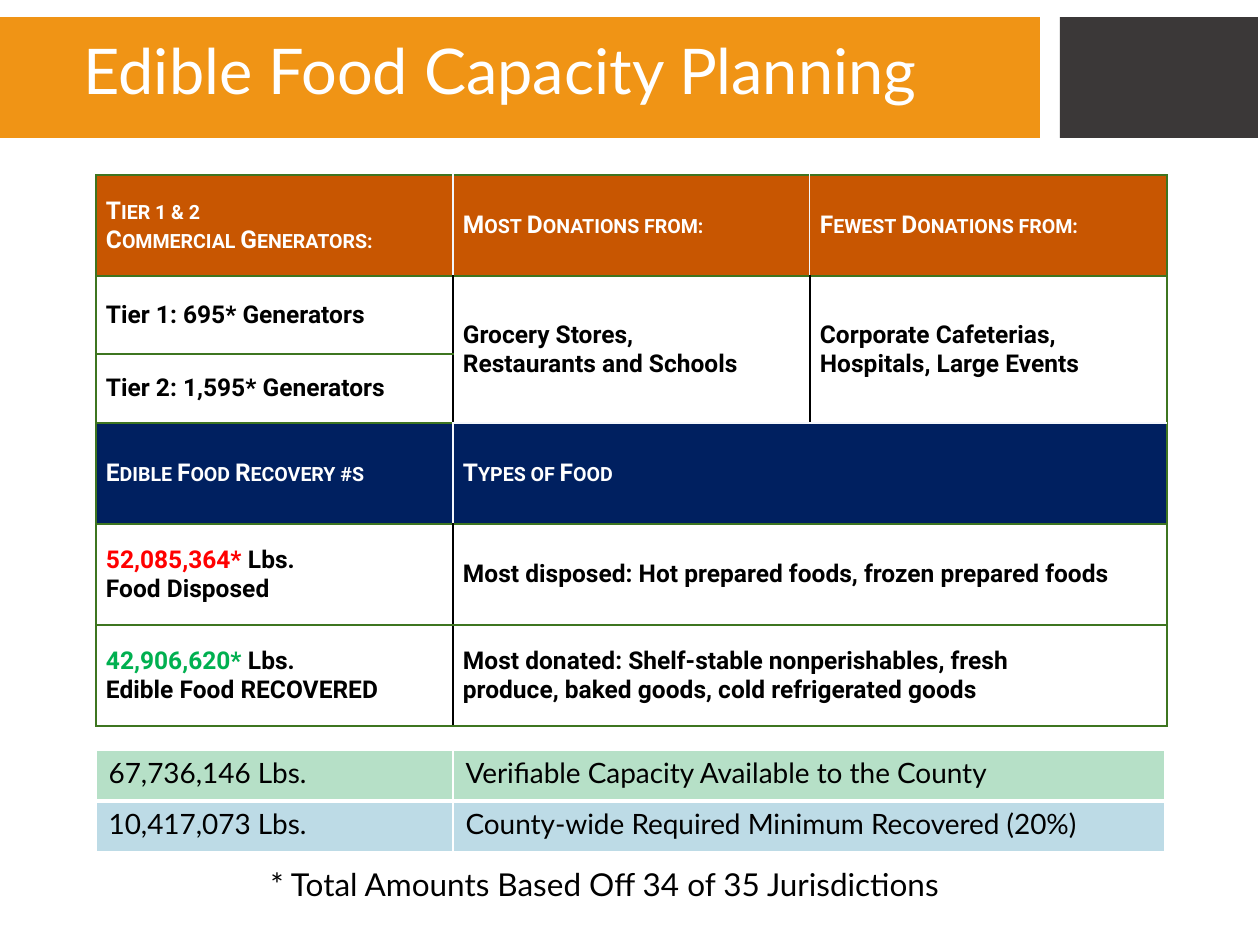
"""Build the slide on edible food capacity planning."""
from lxml import etree
from pptx import Presentation
from pptx.dml.color import RGBColor
from pptx.enum.shapes import MSO_SHAPE
from pptx.enum.text import MSO_ANCHOR, MSO_AUTO_SIZE, PP_ALIGN
from pptx.oxml.ns import qn
from pptx.util import Emu, Pt

RECT = MSO_SHAPE.RECTANGLE
MIDDLE, TOP = MSO_ANCHOR.MIDDLE, MSO_ANCHOR.TOP
LEFT = PP_ALIGN.LEFT
FIXED = MSO_AUTO_SIZE.NONE

HEX = {
    "white": "FFFFFF", "black": "000000", "gold": "F09415", "coal": "3B3838",
    "rust": "C85601", "navy": "002060", "mint": "B6E0C7", "sky": "BDDBE6",
    "red": "FF0000", "green": "00B050", "moss": "3E7520", "pale": "F4F7FC",
}
SCALE = 914400 / 126

TITLE = "Edible Food Capacity Planning"
NOTE = "* Total Amounts Based Off 34 of 35 Jurisdictions"
BARS = [("gold", (-2, 17, 1042, 121)), ("coal", (1060, 17, 198, 121))]

FACTS = [
    ["Tier 1 & 2\nCommercial Generators:", "Most Donations from:", "Fewest Donations from:"],
    ["Tier 1: 695* Generators", "Grocery Stores,\vRestaurants and Schools",
     "Corporate Cafeterias,\nHospitals, Large Events"],
    ["Tier 2: 1,595* Generators", "", ""],
    ["Edible Food Recovery #s", "Types of Food", ""],
    [[("52,085,364*", "red"), (" Lbs.\nFood Disposed", "black")],
     "Most disposed: Hot prepared foods, frozen prepared foods", ""],
    [[("42,906,620*", "green"), (" Lbs.\nEdible Food RECOVERED", "black")],
     "Most donated: Shelf-stable nonperishables, fresh\vproduce, baked goods, cold refrigerated goods", ""],
]
HEADS = {0: "rust", 3: "navy"}
SPANS = [((1, 1), (2, 1)), ((1, 2), (2, 2))] + [((r, 1), (r, 2)) for r in (3, 4, 5)]

TOTALS = [
    ["67,736,146 Lbs.", "Verifiable Capacity Available to the County"],
    ["10,417,073 Lbs.", "County-wide Required Minimum Recovered (20%)"],
]
TINTS = ["mint", "sky"]


def px(num):
    return Emu(round(num * SCALE))


def rgb(name):
    return RGBColor.from_string(HEX[name])


def style(par, face, size, color, bold=False, caps=False):
    font = par.font
    font.name, font.size, font.bold = face, Pt(size), bold
    font.color.rgb = rgb(color)
    if caps:
        par._p.get_or_add_pPr().get_or_add_defRPr().set("cap", "small")


def write(frame, text, **look):
    par = frame.paragraphs[0]
    runs = [(text, None)] if isinstance(text, str) else text
    for words, tint in runs:
        for i, line in enumerate(words.split("\n")):
            if i:
                par = frame.add_paragraph()
            for j, part in enumerate(line.split("\v")):
                if j:
                    par.add_line_break()
                run = par.add_run()
                run.text = part
                if tint:
                    run.font.color.rgb = rgb(tint)
    for par in frame.paragraphs:
        style(par, **look)


def edge(cell, side, color, width):
    line = etree.SubElement(cell._tc.get_or_add_tcPr(), qn(f"a:ln{side}"), w=str(Pt(width)))
    fill = etree.SubElement(line, qn("a:solidFill"))
    etree.SubElement(fill, qn("a:srgbClr"), val=HEX[color])


def grid(slide, rows, left, top, wides, highs, spans=()):
    box = [px(n) for n in (left, top, sum(wides), sum(highs))]
    table = slide.shapes.add_table(len(rows), len(wides), *box).table
    table.first_row = table.horz_banding = False
    for col, wide in zip(table.columns, wides):
        col.width = px(wide)
    for row, high in zip(table.rows, highs):
        row.height = px(high)
    for start, end in spans:
        table.cell(*start).merge(table.cell(*end))
    return table


def dress(cell, text, fill, edges, pad, anchor, **look):
    for side, (color, width) in zip("LRTB", edges):
        edge(cell, side, color, width)
    if fill:
        cell.fill.solid()
        cell.fill.fore_color.rgb = rgb(fill)
    else:
        cell.fill.background()
    cell.margin_left = cell.margin_right = px(pad)
    cell.margin_top = cell.margin_bottom = px(pad / 2)
    cell.vertical_anchor = anchor
    if text:
        write(cell.text_frame, text, **look)


def add_facts(slide):
    table = grid(slide, FACTS, 96, 175, [357] * 3, [101, 78, 69, 101, 101, 101], SPANS)
    rim, pale, dark = ("moss", 0.79), ("pale", 0.75), ("black", 1.05)
    for r, row in enumerate(FACTS):
        head = r in HEADS
        mid = pale if head else dark
        for c, text in enumerate(row):
            edges = (mid if c else rim, rim if c == 2 or r > 2 and c else mid,
                     pale if r == 3 and c else rim, pale if r in (1, 2) and c else rim)
            dress(table.cell(r, c), text, HEADS.get(r), edges, 10, MIDDLE, face="Roboto",
                  size=14, color="white" if head else "black", bold=True, caps=head)


def add_totals(slide):
    table = grid(slide, TOTALS, 96, 750, [357, 712], [51, 51])
    thin, thick = ("white", 1), ("white", 3)
    for r, row in enumerate(TOTALS):
        edges = (thin, thin, thin if r == 0 else thick, thick if r == 0 else thin)
        for c, text in enumerate(row):
            dress(table.cell(r, c), text, TINTS[r], edges, 12.6, TOP,
                  face="Lato", size=16, color="black")


def main():
    deck = Presentation()
    deck.slide_width, deck.slide_height = px(1260), px(945)
    slide = deck.slides.add_slide(deck.slide_layouts[5])
    shapes = slide.shapes
    title = shapes.title
    for color, box in BARS:
        bar = shapes.add_shape(RECT, *map(px, box))
        bar.shadow.inherit = False
        bar.fill.solid()
        bar.fill.fore_color.rgb = rgb(color)
        bar.line.fill.background()
        title._element.addprevious(bar._element)

    title.left, title.top, title.width, title.height = map(px, (71, 0, 950, 149))
    frame = title.text_frame
    frame.auto_size, frame.vertical_anchor = FIXED, MIDDLE
    write(frame, TITLE, face="Lato", size=36, color="white")
    frame.paragraphs[0].alignment = LEFT
    frame.paragraphs[0].line_spacing = 0.9

    add_facts(slide)
    add_totals(slide)
    note = shapes.add_textbox(*map(px, (258, 859, 701, 50))).text_frame
    note.word_wrap = True
    write(note, NOTE, face="Lato", size=18, color="black")
    deck.save("out.pptx")


if __name__ == "__main__":
    main()
